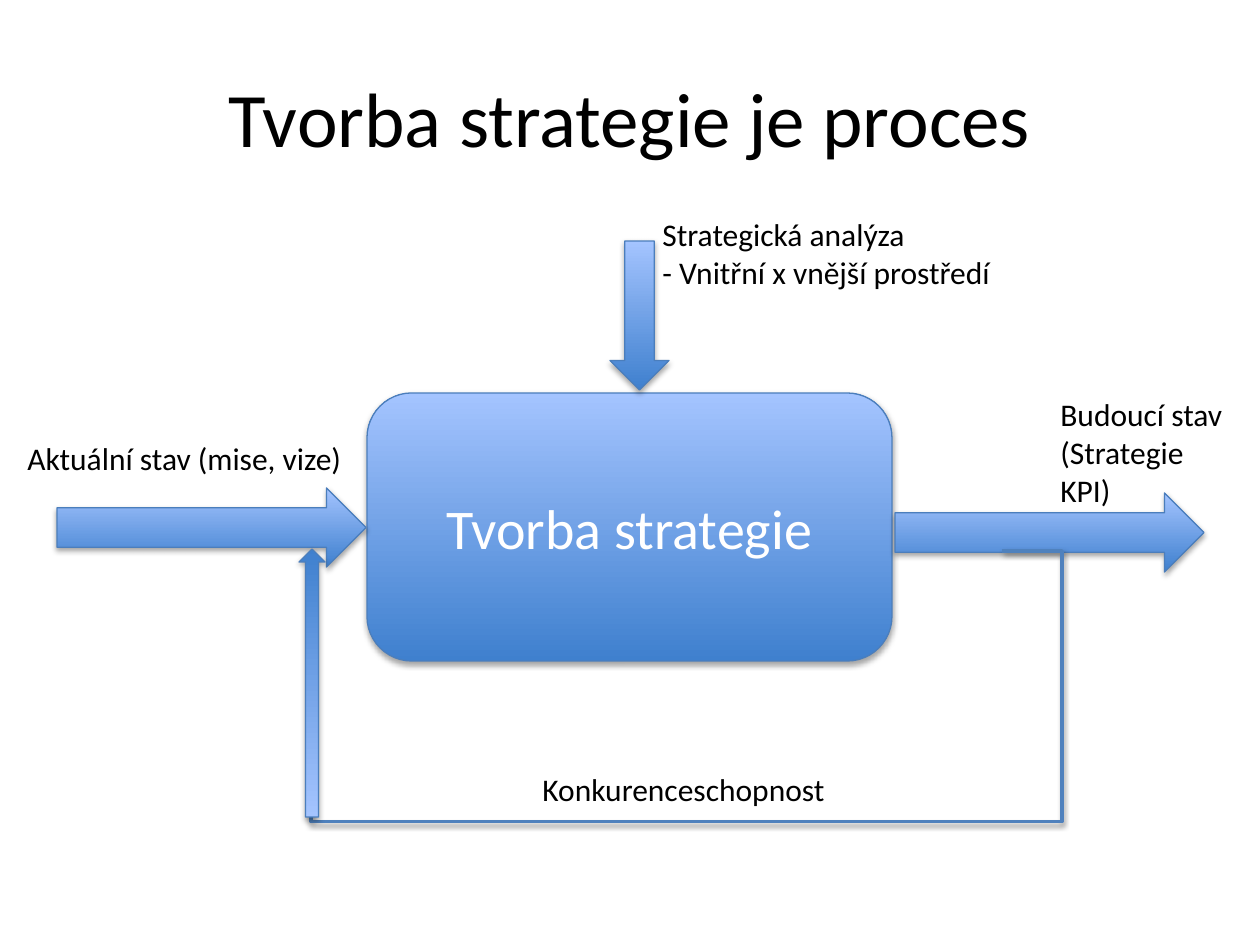
from lxml import etree
from pptx import Presentation
from pptx.dml.color import RGBColor
from pptx.enum import shapes, text
from pptx.oxml import ns
from pptx.util import Pt

PX = 914400 / 126
FONT = "Calibri"
BLACK = RGBColor(0x00, 0x00, 0x00)
WHITE = RGBColor(0xFF, 0xFF, 0xFF)
DARK = RGBColor(0x3F, 0x80, 0xCE)
LIGHT = RGBColor(0xA4, 0xC4, 0xFF)
EDGE = RGBColor(0x4B, 0x7E, 0xBC)
LOOP = RGBColor(0x4F, 0x81, 0xBD)

KIND = shapes.MSO_SHAPE
TITLE = ("Tvorba strategie je proces", (63, 38, 1134, 158))
# kind, box (left, top, width, height), rotation, text
PROCESS = (KIND.ROUNDED_RECTANGLE, (367, 393, 525, 268), 0, "Tvorba strategie")
INPUT = (KIND.RIGHT_ARROW, (57, 488, 309, 79), 0, "")
OUTPUT = (KIND.RIGHT_ARROW, (895, 493, 309, 79), 0, "")
ANALYSIS = (KIND.DOWN_ARROW, (610, 241, 59, 149), 0, "")
RETURN = (KIND.DOWN_ARROW, (299, 549, 26, 268), 180, "")
# feedback line: start, end, and the right and bottom it bends round
START, END, RIGHT, BOTTOM = (1002, 551), (311, 566), 1062, 822
LABELS = [
    ("Strategická analýza\n- Vnitřní x vnější prostředí", (650, 209, 357, 89)),
    ("Budoucí stav \v(Strategie\vKPI)", (1048, 389, 197, 127)),
    ("Aktuální stav (mise, vize)", (15, 433, 343, 50)),
    ("Konkurenceschopnost", (530, 764, 311, 50)),
]


def emu(values):
    return [round(v * PX) for v in values]


def style(frame, size, color, align):
    for par in frame.paragraphs:
        par.alignment = align
        par.font.name, par.font.size = FONT, Pt(size)
        par.font.color.rgb = color


def shade(item, alpha, dist):
    """Give a shape or connector a soft shadow straight below it."""
    props = item._element.spPr
    for old in props.findall(ns.qn("a:effectLst")):
        props.remove(old)
    effects = etree.SubElement(props, ns.qn("a:effectLst"))
    outer = etree.SubElement(effects, ns.qn("a:outerShdw"), blurRad="40000",
                             dist=str(dist), dir="5400000", rotWithShape="0")
    color = etree.SubElement(outer, ns.qn("a:srgbClr"), val="000000")
    etree.SubElement(color, ns.qn("a:alpha"), val=str(alpha * 1000))


def block(slide, kind, box, turn, words):
    shape = slide.shapes.add_shape(kind, *emu(box))
    shape.rotation = turn
    shape.fill.gradient()
    shape.fill.gradient_angle = 90
    for stop, color in zip(shape.fill.gradient_stops, (DARK, LIGHT)):
        stop.color.rgb = color
    shape.line.color.rgb, shape.line.width = EDGE, Pt(0.75)
    shade(shape, 35, 23000)
    if words:
        shape.text_frame.text = words
        shape.text_frame.vertical_anchor = text.MSO_ANCHOR.MIDDLE
        style(shape.text_frame, 32, WHITE, text.PP_ALIGN.CENTER)


def feedback(slide):
    line = slide.shapes.add_connector(shapes.MSO_CONNECTOR.ELBOW,
                                      *emu(START + END))
    line.line.color.rgb, line.line.width = LOOP, Pt(2)
    geom = line._element.spPr.find(ns.qn("a:prstGeom"))
    geom.set("prst", "bentConnector4")
    guides = geom.find(ns.qn("a:avLst"))
    if guides is None:
        guides = etree.SubElement(geom, ns.qn("a:avLst"))
    bends = ((RIGHT - START[0]) / (END[0] - START[0]),
             (BOTTOM - START[1]) / (END[1] - START[1]))
    for num, bend in enumerate(bends, 1):
        etree.SubElement(guides, ns.qn("a:gd"), name=f"adj{num}",
                         fmla=f"val {round(bend * 100000)}")
    shade(line, 38, 20000)


def label(slide, words, box):
    frame = slide.shapes.add_textbox(*emu(box)).text_frame
    frame.text = words
    frame.word_wrap = False
    frame.auto_size = text.MSO_AUTO_SIZE.SHAPE_TO_FIT_TEXT
    style(frame, 18, BLACK, text.PP_ALIGN.LEFT)


def main():
    prs = Presentation()
    prs.slide_width, prs.slide_height = emu((1260, 945))
    slide = prs.slides.add_slide(prs.slide_layouts[5])
    title = slide.shapes.title
    words, box = TITLE
    title.left, title.top, title.width, title.height = emu(box)
    title.text_frame.text = words
    title.text_frame.vertical_anchor = text.MSO_ANCHOR.MIDDLE
    style(title.text_frame, 44, BLACK, text.PP_ALIGN.CENTER)
    for part in (PROCESS, INPUT, OUTPUT, ANALYSIS):
        block(slide, *part)
    feedback(slide)
    block(slide, *RETURN)
    for words, box in LABELS:
        label(slide, words, box)
    prs.save("out.pptx")


if __name__ == "__main__":
    main()
